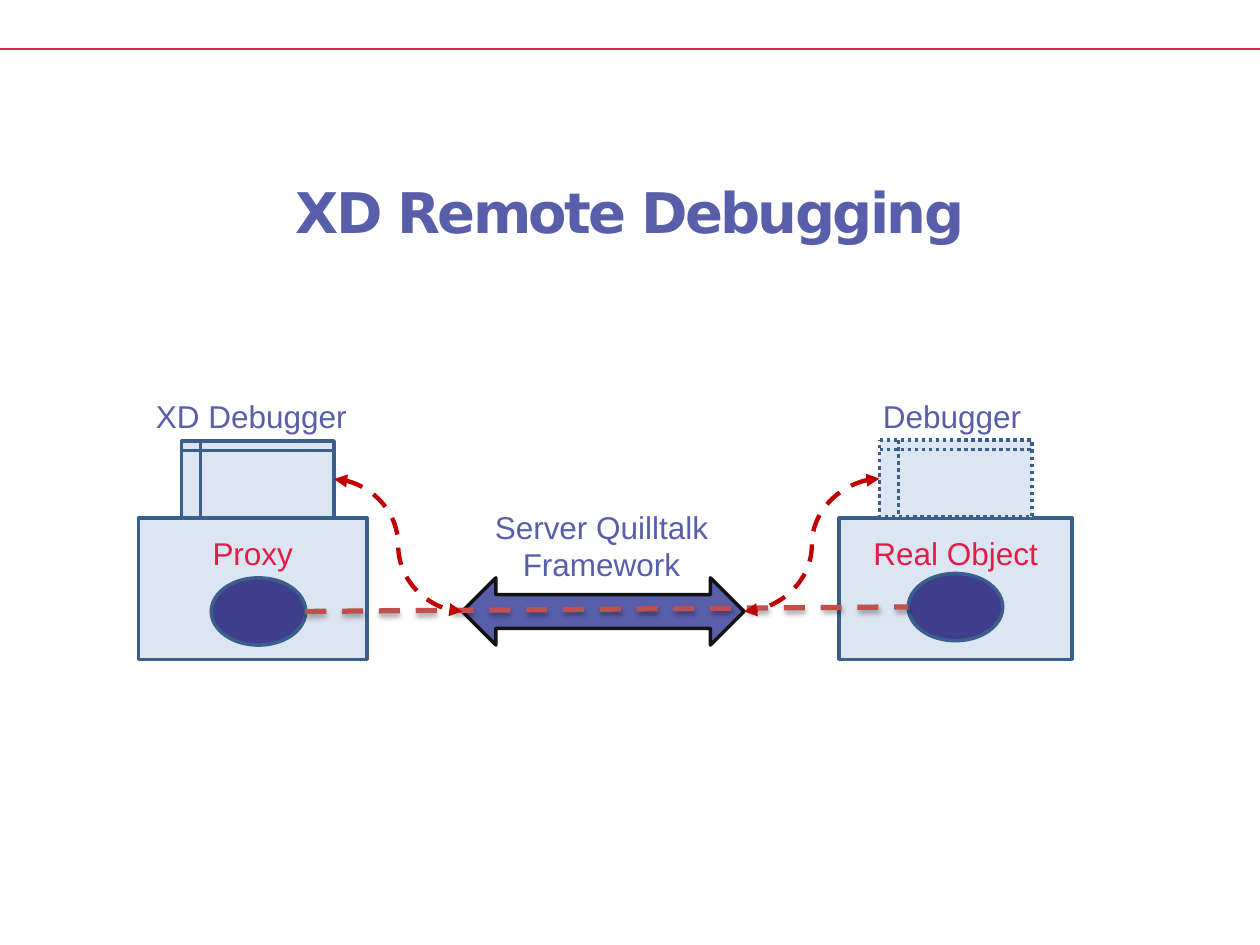
from dataclasses import dataclass

from lxml.etree import SubElement
from pptx import Presentation
from pptx.dml.color import RGBColor
from pptx.enum.dml import MSO_LINE
from pptx.enum.shapes import MSO_CONNECTOR, MSO_SHAPE
from pptx.enum.text import MSO_ANCHOR, PP_ALIGN
from pptx.oxml.ns import qn
from pptx.util import Pt


@dataclass(frozen=True)
class Theme:
    violet: str = "595EAB"
    red: str = "E11D48"
    pale: str = "DCE6F2"
    outline: str = "3A5F8C"
    object_fill: str = "3F3E8C"
    arrow_line: str = "131313"
    link: str = "C0504D"
    curve: str = "C00000"
    title_font: str = "DejaVu Sans"
    body_font: str = "Arial"
    title_size: int = 32
    body_size: int = 18


THEME = Theme()


def rgb(value):
    return RGBColor.from_string(value)


def add_lines(tf, lines, color, align, size=THEME.body_size, font=THEME.body_font, bold=False):
    runs = []
    for i, text in enumerate(lines):
        p = tf.paragraphs[0] if i == 0 else tf.add_paragraph()
        p.alignment = align
        r = p.add_run()
        r.text = text
        r.font.name = font
        r.font.size = Pt(size)
        r.font.bold = bold
        r.font.color.rgb = rgb(color)
        runs.append(r)
    return runs


def add_label(s, x, y, w, h, lines, align=PP_ALIGN.LEFT, wrap=False):
    tf = s.shapes.add_textbox(Pt(x), Pt(y), Pt(w), Pt(h)).text_frame
    tf.word_wrap = wrap
    add_lines(tf, lines, THEME.violet, align)


def add_title(s, text):
    tf = s.shapes.add_textbox(Pt(50), Pt(98.5), Pt(620), Pt(44)).text_frame
    tf.word_wrap = True
    tf.vertical_anchor = MSO_ANCHOR.MIDDLE
    r, = add_lines(tf, [text], THEME.violet, PP_ALIGN.CENTER,
                   THEME.title_size, THEME.title_font, True)
    r.font._element.set("spc", "-150")


def add_block(s, kind, x, y, w, h, fill=THEME.pale, line=THEME.outline, dash=None):
    sp = s.shapes.add_shape(kind, Pt(x), Pt(y), Pt(w), Pt(h))
    sp.shadow.inherit = False
    sp.fill.solid()
    sp.fill.fore_color.rgb = rgb(fill)
    sp.line.color.rgb = rgb(line)
    sp.line.width = Pt(2)
    if dash:
        sp.line.dash_style = dash
    return sp


def add_image_box(s, x, w, text):
    tf = add_block(s, MSO_SHAPE.RECTANGLE, x, 296, w, 80.8).text_frame
    tf.word_wrap = True
    tf.vertical_anchor = MSO_ANCHOR.TOP
    tf.margin_top = Pt(9.25)
    add_lines(tf, [text], THEME.red, PP_ALIGN.CENTER)


def add_line(s, start, end, color, width, kind=MSO_CONNECTOR.STRAIGHT, dash=None):
    c = s.shapes.add_connector(kind, *map(Pt, (*start, *end)))
    c.line.color.rgb = rgb(color)
    c.line.width = Pt(width)
    if dash:
        c.line.dash_style = dash
    effects = SubElement(c._element.spPr, qn("a:effectLst"))
    return c, effects


def add_curve(s, start, end):
    c, _ = add_line(s, start, end, THEME.curve, 2.5, MSO_CONNECTOR.CURVE, MSO_LINE.DASH)
    ln = c.line._get_or_add_ln()
    for tag in ("a:headEnd", "a:tailEnd"):
        SubElement(ln, qn(tag), type="triangle")


def add_object_link(s, start, end):
    _, effects = add_line(s, start, end, THEME.link, 3, dash=MSO_LINE.DASH)
    shadow = SubElement(effects, qn("a:outerShdw"), blurRad=str(Pt(3.1)),
                        dist=str(Pt(1.8)), dir="5400000", rotWithShape="0")
    color = SubElement(shadow, qn("a:srgbClr"), val="000000")
    SubElement(color, qn("a:alpha"), val="35000")


def main():
    prs = Presentation()
    prs.slide_width, prs.slide_height = Pt(720), Pt(540)
    s = prs.slides.add_slide(prs.slide_layouts[6])

    add_line(s, (0, 28), (720, 28), THEME.red, 1.5)
    add_title(s, "XD Remote Debugging")

    add_image_box(s, 79.2, 130.5, "Proxy")
    add_image_box(s, 479.6, 133, "Real Object")

    add_block(s, MSO_SHAPE.LEFT_RIGHT_ARROW, 264.2, 330.2, 161, 38.4,
              THEME.violet, THEME.arrow_line)
    add_label(s, 265, 286.5, 157.5, 51, ["Server Quilltalk", "Framework"],
              PP_ALIGN.CENTER, True)

    for x, y in ((120.7, 330.2), (519, 327.7)):
        add_block(s, MSO_SHAPE.OVAL, x, y, 54, 38.4, THEME.object_fill)
    add_object_link(s, (174.5, 349.4), (519, 346.8))

    for x, y, dash, label_x, label_w, label in (
        (103.7, 252, None, 82, 124.5, "XD Debugger"),
        (502.6, 251.5, MSO_LINE.ROUND_DOT, 497.4, 94.3, "Debugger"),
    ):
        add_block(s, MSO_SHAPE.FLOWCHART_INTERNAL_STORAGE, x, y, 87.2, 44, dash=dash)
        add_label(s, label_x, 223.2, label_w, 29, [label])

    add_curve(s, (502.6, 273.5), (425.2, 349.4))
    add_curve(s, (190.9, 273.8), (264.2, 349.4))

    prs.save("out.pptx")


if __name__ == "__main__":
    main()
